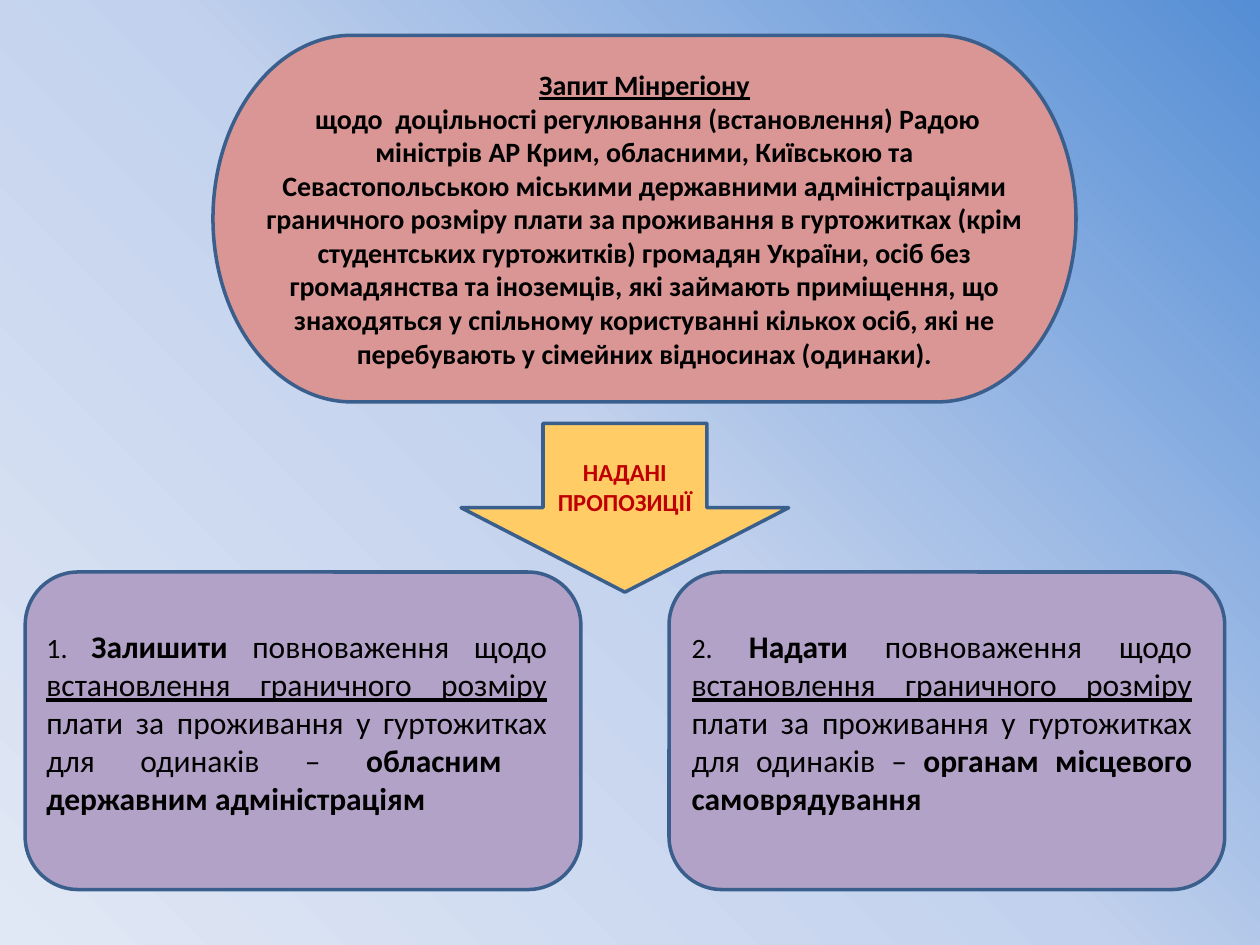
from copy import deepcopy
from pptx import Presentation, util as u
from pptx.dml.color import RGBColor
from pptx.enum import shapes, text
from pptx.oxml.ns import qn

WIDE, HIGH = u.Inches(10), u.Inches(7.5)
SHAPE, ALIGN = shapes.MSO_SHAPE, text.PP_ALIGN
BLACK, RED, EDGE = "000000", "C00000", "3A5F8C"


def paint(color, code):
    color.rgb = RGBColor.from_string(code)


def place(x, y, w, h):
    """Turn percentages of the slide into lengths."""
    return [int(size * share / 100)
            for size, share in zip((WIDE, HIGH, WIDE, HIGH), (x, y, w, h))]


def backdrop(slide, stops, angle):
    """Fill the background with a gradient; angle is counter-clockwise."""
    fill = slide.background.fill
    fill.gradient()
    fill.gradient_angle = angle
    items = slide.element.find(".//" + qn("a:gsLst"))
    while len(items) < len(stops):
        items.append(deepcopy(items[0]))
    for stop, (pos, code) in zip(fill.gradient_stops, stops):
        stop.position = pos
        paint(stop.color, code)


def block(slide, kind, area, fill):
    shape = slide.shapes.add_shape(kind, *place(*area))
    shape.shadow.inherit = False
    shape.fill.solid()
    paint(shape.fill.fore_color, fill)
    paint(shape.line.color, EDGE)
    shape.line.width = u.Pt(2)
    return shape


def write(para, words, size=18, color=BLACK, bold=False, under=False):
    run = para.add_run()
    run.text = words
    font = run.font
    font.name, font.size = "Calibri", u.Pt(size)
    font.bold, font.underline = bold, under
    paint(font.color, color)


def center(shape):
    """Centre a shape's text and return its first paragraph."""
    frame = shape.text_frame
    frame.word_wrap = True
    frame.vertical_anchor = text.MSO_ANCHOR.MIDDLE
    frame.paragraphs[0].alignment = ALIGN.CENTER
    return frame.paragraphs[0]


def option(slide, left, number, verb, gap, body):
    """Write one proposal, with its verb and its chosen body in bold."""
    frame = slide.shapes.add_textbox(*place(left, 65.73, 41.7, 21.6)).text_frame
    frame.word_wrap = True
    frame.auto_size = text.MSO_AUTO_SIZE.SHAPE_TO_FIT_TEXT
    para = frame.paragraphs[0]
    para.alignment = ALIGN.JUSTIFY
    write(para, number, size=16)
    write(para, verb, bold=True)
    write(para, gap + "повноваження щодо ")
    write(para, "встановлення граничного розміру", under=True)
    write(para, " плати за проживання у гуртожитках для одинаків – ")
    write(para, body, bold=True)


def request(slide):
    shape = block(slide, SHAPE.FLOWCHART_TERMINATOR,
                  (16.9, 3.73, 68.5, 38.8), "D99694")
    write(center(shape), "Запит Мінрегіону", size=16, bold=True, under=True)
    para = shape.text_frame.add_paragraph()
    para.alignment = ALIGN.CENTER
    write(para,
          " щодо  доцільності регулювання (встановлення) Радою міністрів "
          "АР Крим, обласними, Київською та Севастопольською міськими "
          "державними адміністраціями граничного розміру плати за проживання "
          "в гуртожитках (крім студентських гуртожитків) громадян України, "
          "осіб без громадянства та іноземців, які займають приміщення, що "
          "знаходяться у спільному користуванні кількох осіб, які не "
          "перебувають у сімейних відносинах (одинаки).",
          size=16, bold=True)


def arrow(slide):
    shape = block(slide, SHAPE.DOWN_ARROW, (36.6, 44.8, 26, 17.87), "FFCC66")
    para = center(shape)
    write(para, "НАДАНІ", size=14, color=RED, bold=True)
    para.add_line_break()
    write(para, "ПРОПОЗИЦІЇ", size=14, color=RED, bold=True)


def main():
    deck = Presentation()
    deck.slide_width, deck.slide_height = WIDE, HIGH
    slide = deck.slides.add_slide(deck.slide_layouts[6])
    backdrop(slide, [(0, "558ED5"), (0.5, "C2D1ED"), (1, "E1E8F5")], 225)
    for left in (53.1, 2):
        block(slide, SHAPE.ROUNDED_RECTANGLE, (left, 60.53, 44.1, 33.6), "B3A2C7")
    arrow(slide)
    option(slide, 2.7, "1. ", "Залишити ", "", "обласним  державним адміністраціям ")
    option(slide, 53.9, "2. ", "Надати", " ", "органам місцевого самоврядування")
    request(slide)
    deck.save("out.pptx")


if __name__ == "__main__":
    main()
